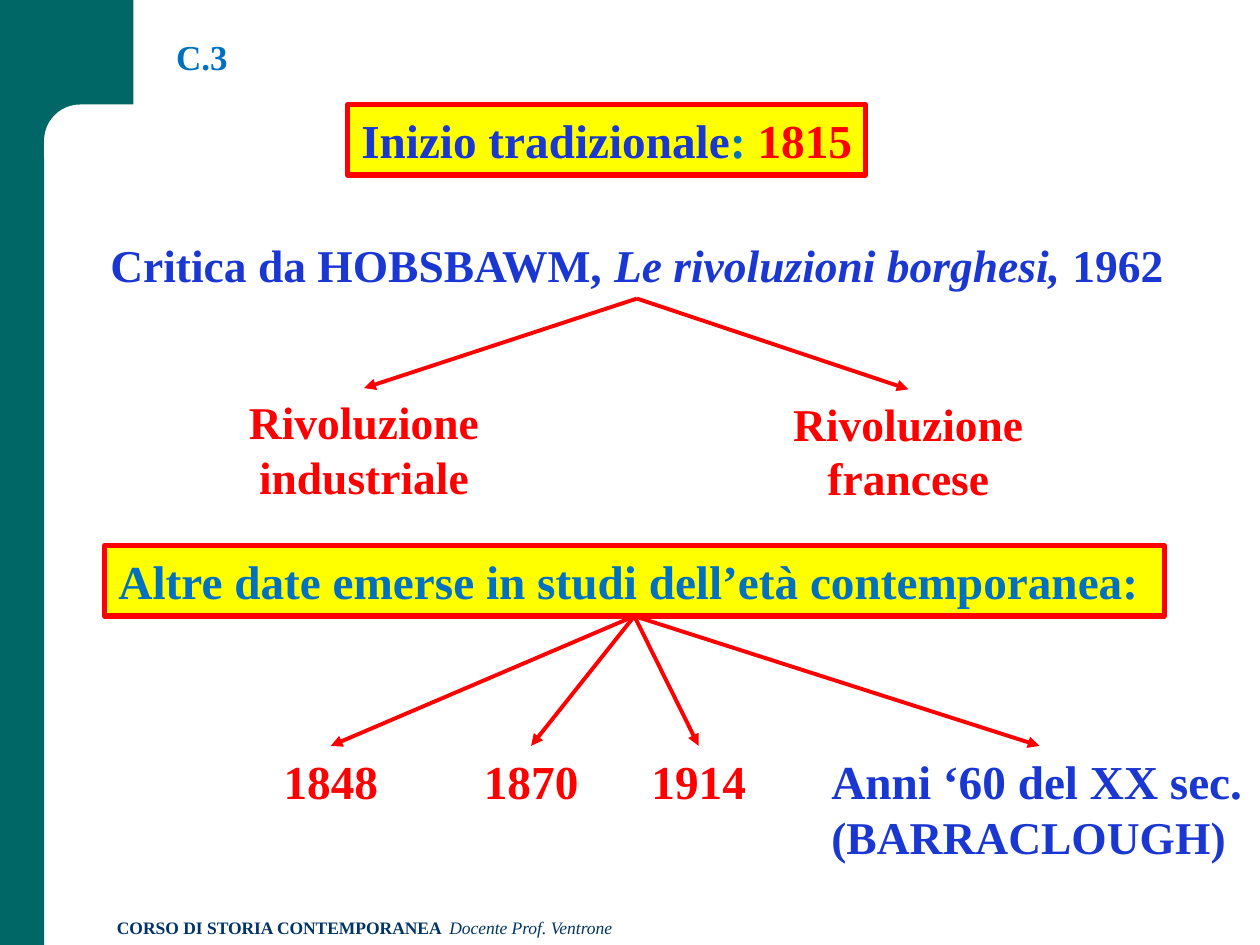
import pptx
import pptx.dml.color
import pptx.enum.shapes
import pptx.enum.text
import pptx.oxml
import pptx.util
from pptx.util import Inches

SHAPES = pptx.enum.shapes.MSO_SHAPE
CENTER = pptx.enum.text.PP_ALIGN.CENTER
LEFT = pptx.enum.text.PP_ALIGN.LEFT
TEAL, WHITE, YELLOW, RED = "006666", "FFFFFF", "FFFF00", "FF0000"
BLUE, SKY, NAVY = "1B37D1", "0070C0", "003366"


def color(value):
    """Turn a hex string into a colour."""
    return pptx.dml.color.RGBColor.from_string(value)


def add_block(page, left, top, width, height, fill, preset=SHAPES.RECTANGLE):
    """Add a filled shape without outline or shadow."""
    block = page.shapes.add_shape(
        preset, Inches(left), Inches(top), Inches(width), Inches(height))
    block.shadow.inherit = False
    block.fill.solid()
    block.fill.fore_color.rgb = color(fill)
    block.line.fill.background()
    return block


def write(box, spans, size, align=CENTER, wrap=False):
    """Write one paragraph of (text, colour, options) spans into a box."""
    frame = box.text_frame
    frame.word_wrap = wrap
    paragraph = frame.paragraphs[0]
    paragraph.alignment = align
    paragraph.font.name = "Times New Roman"
    paragraph.font.size = pptx.util.Pt(size)
    for text, hue, options in spans:
        span = paragraph.add_run()
        span.text = text
        span.font.color.rgb = color(hue)
        span.font.bold = options.get("bold", True)
        span.font.italic = options.get("italic", False)
        if "size" in options:
            span.font.size = pptx.util.Pt(options["size"])
    return box


def add_text(page, left, top, width, height, spans, size, align=CENTER, wrap=False):
    """Add a text box holding one paragraph."""
    box = page.shapes.add_textbox(
        Inches(left), Inches(top), Inches(width), Inches(height))
    return write(box, spans, size, align, wrap)


def add_banner(page, left, top, width, spans):
    """Add a yellow heading box with a red outline."""
    banner = add_block(page, left, top, width, 0.56, YELLOW)
    banner.line.color.rgb = color(RED)
    banner.line.width = pptx.util.Pt(3)
    return write(banner, spans, 27)


def add_arrow(page, source, target):
    """Join the bottom of one box to the top of another with a red arrow."""
    arrow = page.shapes.add_connector(
        pptx.enum.shapes.MSO_CONNECTOR.STRAIGHT, 0, 0, 0, 0)
    arrow.begin_connect(source, 2)
    arrow.end_connect(target, 0)
    arrow.line.color.rgb = color(RED)
    arrow.line.width = pptx.util.Pt(2.25)
    head = pptx.oxml.parse_xml(
        '<a:tailEnd xmlns:a="http://schemas.openxmlformats.org/drawingml/2006/main" type="triangle"/>')
    arrow.line._get_or_add_ln().append(head)
    properties = arrow._element.spPr
    properties.append(properties.makeelement(pptx.oxml.ns.qn("a:effectLst"), {}))


def add_frame(page):
    """Add the teal side band, the rounded corner and the footer."""
    add_block(page, 0, 0, 0.35, 7.5, TEAL)
    add_block(page, 0, 0, 1.06, 1.17, TEAL)
    corner = add_block(page, 0.35, 0.83, 6.06, 0.67, WHITE, SHAPES.ROUNDED_RECTANGLE)
    corner.adjustments[0] = 0.43
    add_text(page, 0.83, 7.23, 6.17, 0.27, [
        ("CORSO DI STORIA CONTEMPORANEA  ", NAVY, {}),
        ("Docente Prof. Ventrone", NAVY, {"bold": False, "italic": True}),
    ], 10, LEFT, True)


def main():
    """Build the slide and save it."""
    deck = pptx.Presentation()
    deck.slide_width, deck.slide_height = Inches(10), Inches(7.5)
    page = deck.slides.add_slide(deck.slide_layouts[6])
    add_frame(page)

    title = add_text(page, 1.3, 0, 1, 0.67, [("C.3", SKY, {})], 20, LEFT, True)
    title.text_frame.vertical_anchor = pptx.enum.text.MSO_ANCHOR.BOTTOM
    title.text_frame.paragraphs[0].line_spacing = 0.9

    add_banner(page, 2.76, 0.83, 4.11, [
        ("Inizio tradizionale", BLUE, {}), (": ", SKY, {}), ("1815", RED, {})])
    critique = add_text(page, 0.74, 1.83, 8.63, 0.54, [
        ("Critica da HOBSBAWM, ", BLUE, {}),
        ("Le rivoluzioni borghesi, ", BLUE, {"italic": True}),
        ("1962", BLUE, {}),
    ], 26)
    industrial = add_text(
        page, 1, 3.08, 3.78, 0.53, [("Rivoluzione industriale", RED, {})], 26)
    french = add_text(
        page, 5.51, 3.09, 3.4, 0.53, [("Rivoluzione francese", RED, {})], 26, wrap=True)
    french.text_frame.margin_left = french.text_frame.margin_right = Inches(0.3)
    for revolution in (industrial, french):
        add_arrow(page, critique, revolution)

    other_dates = add_banner(page, 0.83, 4.33, 8.41, [
        ("Altre date emerse in studi dell’età contemporanea: ", SKY, {})])
    dates = [
        add_text(page, left, 5.92, 0.95, 0.55, [(year, RED, {})], 27)
        for left, year in ((2.15, "1848"), (3.74, "1870"), (5.07, "1914"))]
    dates.append(add_text(page, 6.5, 5.92, 3.5, 0.98, [
        ("Anni ‘60 del XX sec.", BLUE, {}),
        (" (BARRACLOUGH)", BLUE, {"size": 26}),
    ], 27, LEFT, True))
    for date in dates:
        add_arrow(page, other_dates, date)

    deck.save("out.pptx")


if __name__ == "__main__":
    main()
